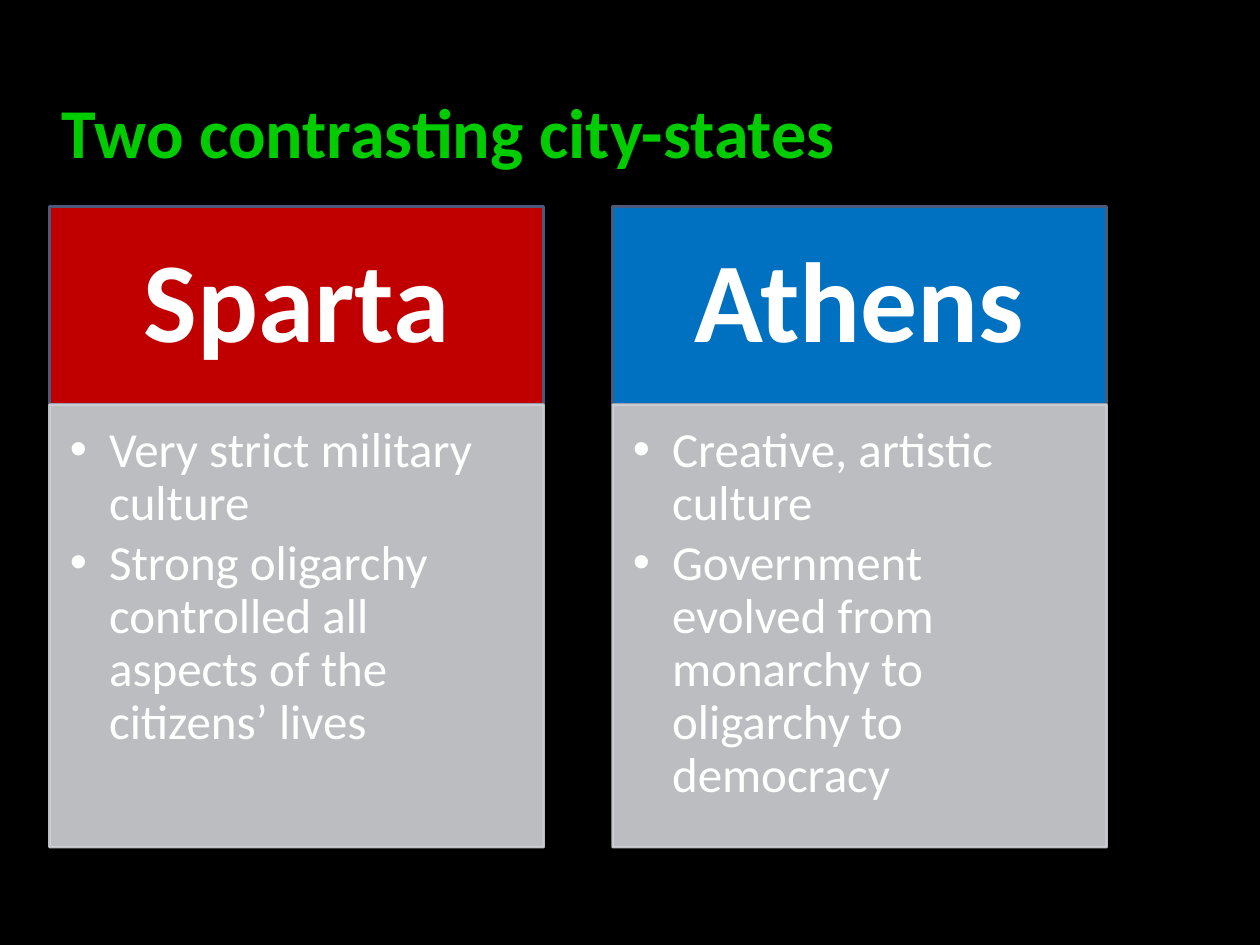
"""Build a slide that contrasts Sparta and Athens in two columns."""
from lxml.etree import SubElement
from pptx import Presentation
from pptx.dml.color import RGBColor
from pptx.enum.shapes import MSO_SHAPE
from pptx.enum.text import MSO_ANCHOR, PP_ALIGN
from pptx.oxml.ns import qn
from pptx.util import Cm, Pt

THEME = {
    "font": "Calibri", "background": "000000", "title": "00CC00", "text": "FFFFFF",
    "sparta": "C00000", "athens": "0070C0", "edge": "4A5A7A", "panel": "D0D2D7",
    "title_size": 40, "head_size": 65, "body_size": 28,
}
COLUMNS = [
    ("Sparta", "sparta", ["Very strict military culture",
                          "Strong oligarchy controlled all aspects of the citizens’ lives"]),
    ("Athens", "athens", ["Creative, artistic culture",
                          "Government evolved from monarchy to oligarchy to democracy"]),
]
LEFT, TOP, STEP = 1, 4.17, 11.35
WIDTH, HEAD_HEIGHT, BODY_HEIGHT = 9.96, 3.99, 8.92
HEAD_FRAME = {"word_wrap": True, "vertical_anchor": MSO_ANCHOR.MIDDLE,
              "margin_left": Cm(1.3), "margin_right": Cm(1.3),
              "margin_top": Cm(0.74), "margin_bottom": Cm(0.74)}
BODY_FRAME = {"word_wrap": True, "vertical_anchor": MSO_ANCHOR.TOP,
              "margin_left": Cm(0.41), "margin_right": Cm(0.56),
              "margin_top": Cm(0.41), "margin_bottom": Cm(0.61)}
TITLE_FRAME = {"word_wrap": True, "vertical_anchor": MSO_ANCHOR.BOTTOM}
HEAD_PARAGRAPH = {"alignment": PP_ALIGN.CENTER, "line_spacing": 0.9}
BODY_PARAGRAPH = {"alignment": PP_ALIGN.LEFT, "line_spacing": 0.9,
                  "space_after": Pt(4.2), "level": 1}
TITLE_PARAGRAPH = {"alignment": PP_ALIGN.LEFT, "space_before": Pt(4)}


def add_box(top, height, left, fill, line):
    s = slide.shapes.add_shape(MSO_SHAPE.RECTANGLE, Cm(left), Cm(top), Cm(WIDTH), Cm(height))
    s.shadow.inherit = False
    s.fill.solid()
    s.fill.fore_color.rgb = RGBColor.from_string(THEME[fill])
    s.line.color.rgb = RGBColor.from_string(THEME[line])
    s.line.width = Pt(1.5)
    return s


def write(s, texts, frame, paragraph, size, color, bold):
    tf = s.text_frame
    for name, value in frame.items():
        setattr(tf, name, value)
    for i, text in enumerate(texts):
        p = tf.add_paragraph() if i else tf.paragraphs[0]
        for name, value in paragraph.items():
            setattr(p, name, value)
        r = p.add_run()
        r.text = text
        for name, value in {"name": THEME["font"], "size": Pt(THEME[size]), "bold": bold}.items():
            setattr(r.font, name, value)
        r.font.color.rgb = RGBColor.from_string(THEME[color])
    return tf.paragraphs


prs = Presentation()
prs.slide_width, prs.slide_height = Cm(25.4), Cm(19.05)
slide = prs.slides.add_slide(prs.slide_layouts[6])
slide.background.fill.solid()
slide.background.fill.fore_color.rgb = RGBColor.from_string(THEME["background"])

for i, (heading, color, points) in enumerate(COLUMNS):
    left = LEFT + i * STEP
    head = add_box(TOP, HEAD_HEIGHT, left, color, "edge")
    write(head, [heading], HEAD_FRAME, HEAD_PARAGRAPH, "head_size", "text", True)

    body = add_box(TOP + HEAD_HEIGHT, BODY_HEIGHT, left, "panel", "panel")
    for clr in body.element.spPr.iter(qn("a:srgbClr")):
        SubElement(clr, qn("a:alpha"), val="90000")
    for p in write(body, points, BODY_FRAME, BODY_PARAGRAPH, "body_size", "text", False):
        pPr = p._p.get_or_add_pPr()
        pPr.set("marL", str(Cm(0.79)))
        pPr.set("indent", str(-Cm(0.79)))
        SubElement(pPr, qn("a:buFont"), typeface="Arial")
        SubElement(pPr, qn("a:buChar"), char="•")

title = slide.shapes.add_textbox(Cm(LEFT), Cm(0.64), Cm(21.34), Cm(2.97))
write(title, ["Two contrasting city-states"], TITLE_FRAME, TITLE_PARAGRAPH,
      "title_size", "title", True)

prs.save("out.pptx")
